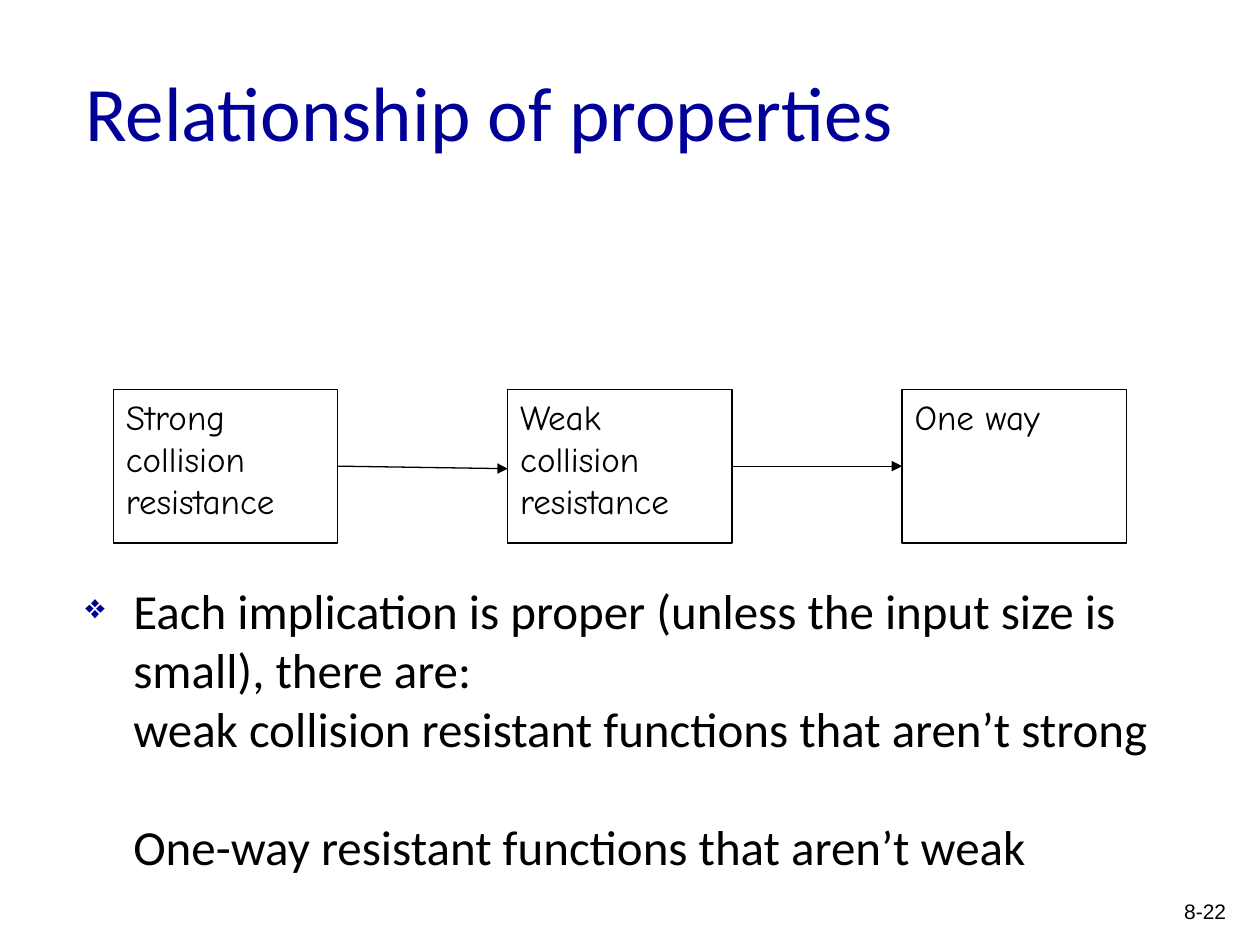
from dataclasses import dataclass

from lxml.etree import SubElement
from pptx import Presentation
from pptx.dml.color import RGBColor
from pptx.enum.shapes import MSO_CONNECTOR as Connector, MSO_SHAPE as Preset
from pptx.enum.text import MSO_ANCHOR as Anchor, PP_ALIGN as Align
from pptx.oxml.ns import qn
from pptx.util import Inches, Pt


@dataclass(frozen=True)
class TextStyle:
    font: str
    size: int
    color: RGBColor


@dataclass(frozen=True)
class Theme:
    black: RGBColor = RGBColor(0, 0, 0)
    navy: RGBColor = RGBColor(0, 0, 0x99)
    line_width: float = 0.75
    title: TextStyle = TextStyle("Calibri", 44, navy)
    body: TextStyle = TextStyle("Calibri", 28, black)
    box: TextStyle = TextStyle("Comic Neue", 20, black)
    number: TextStyle = TextStyle("Arial", 12, black)


@dataclass(frozen=True)
class Area:
    left: float
    top: float
    width: float
    height: float

    def emu(self) -> list[int]:
        return [Inches(v) for v in (self.left, self.top, self.width, self.height)]


THEME = Theme()
MARGIN = 0.58
INDENT = 0.38

# Row of property boxes, one per column
PROPERTIES = (
    "Strong\vcollision\vresistance",
    "Weak\vcollision\vresistance",
    "One way",
)
FIRST_BOX = Area(0.9, 3.09, 1.78, 1.22)
COLUMN_STEP = 3.13
ARROW_Y = FIRST_BOX.top + FIRST_BOX.height / 2
ARROW_DROPS = (0.02, 0)  # the first arrow slopes slightly downwards


def format_text(text_frame, style: TextStyle, align=Align.LEFT) -> None:
    for paragraph in text_frame.paragraphs:
        paragraph.alignment = align
        for run in paragraph.runs:
            run.font.name = style.font
            run.font.size = Pt(style.size)
            run.font.color.rgb = style.color


def add_text(slide, area: Area, text: str, style: TextStyle,
             align=Align.LEFT, anchor=Anchor.TOP):
    text_frame = slide.shapes.add_textbox(*area.emu()).text_frame
    text_frame.word_wrap = True
    text_frame.vertical_anchor = anchor
    text_frame.text = text
    format_text(text_frame, style, align)
    return text_frame


def add_property(slide, column: int, text: str) -> None:
    area = Area(FIRST_BOX.left + column * COLUMN_STEP, FIRST_BOX.top,
                FIRST_BOX.width, FIRST_BOX.height)
    shape = slide.shapes.add_shape(Preset.RECTANGLE, *area.emu())
    shape.shadow.inherit = False
    shape.fill.background()
    shape.line.color.rgb = THEME.black
    shape.line.width = Pt(THEME.line_width)
    shape.text_frame.vertical_anchor = Anchor.TOP
    shape.text_frame.text = text
    format_text(shape.text_frame, THEME.box)


def add_arrow(slide, column: int, drop: float) -> None:
    start = FIRST_BOX.left + FIRST_BOX.width + column * COLUMN_STEP
    end = FIRST_BOX.left + (column + 1) * COLUMN_STEP
    arrow = slide.shapes.add_connector(
        Connector.STRAIGHT, Inches(start), Inches(ARROW_Y),
        Inches(end), Inches(ARROW_Y + drop))
    arrow.line.color.rgb = THEME.black
    arrow.line.width = Pt(THEME.line_width)
    SubElement(arrow.line._get_or_add_ln(), qn("a:tailEnd"), type="triangle")
    SubElement(arrow._element.spPr, qn("a:effectLst"))


def set_indent(paragraph, left: float, first: float):
    properties = paragraph._p.get_or_add_pPr()
    properties.set("marL", str(Inches(left)))
    properties.set("indent", str(Inches(first)))
    return properties


def add_bullet(paragraph) -> None:
    properties = set_indent(paragraph, INDENT, -INDENT)
    color = SubElement(properties, qn("a:buClr"))
    SubElement(color, qn("a:srgbClr"), val=str(THEME.navy))
    SubElement(properties, qn("a:buSzPct"), val="70000")
    SubElement(properties, qn("a:buChar"), char="❖")


def main() -> None:
    presentation = Presentation()
    presentation.slide_width, presentation.slide_height = Inches(10), Inches(7.5)
    slide = presentation.slides.add_slide(presentation.slide_layouts[6])

    # Slide number and title
    add_text(slide, Area(9.09, 7.08, 0.74, 0.33), "8-22", THEME.number, Align.RIGHT)
    add_text(slide, Area(MARGIN, 0.25, 8.5, 1.25), "Relationship of properties",
             THEME.title, anchor=Anchor.MIDDLE)

    # Chain of implications
    for column, text in enumerate(PROPERTIES):
        add_property(slide, column, text)
    for column, drop in enumerate(ARROW_DROPS):
        add_arrow(slide, column, drop)

    # Explanation: a bullet and its continuation one line further down
    body = add_text(
        slide, Area(MARGIN, 4.56, 8.92, 2.27),
        "Each implication is proper (unless the input size is small), there are:\v"
        "weak collision resistant functions that aren’t strong\n"
        "One-way resistant functions that aren’t weak", THEME.body)
    bullet, continuation = body.paragraphs
    add_bullet(bullet)
    set_indent(continuation, INDENT, 0)
    continuation.space_before = Pt(34)

    presentation.save("out.pptx")


if __name__ == "__main__":
    main()
